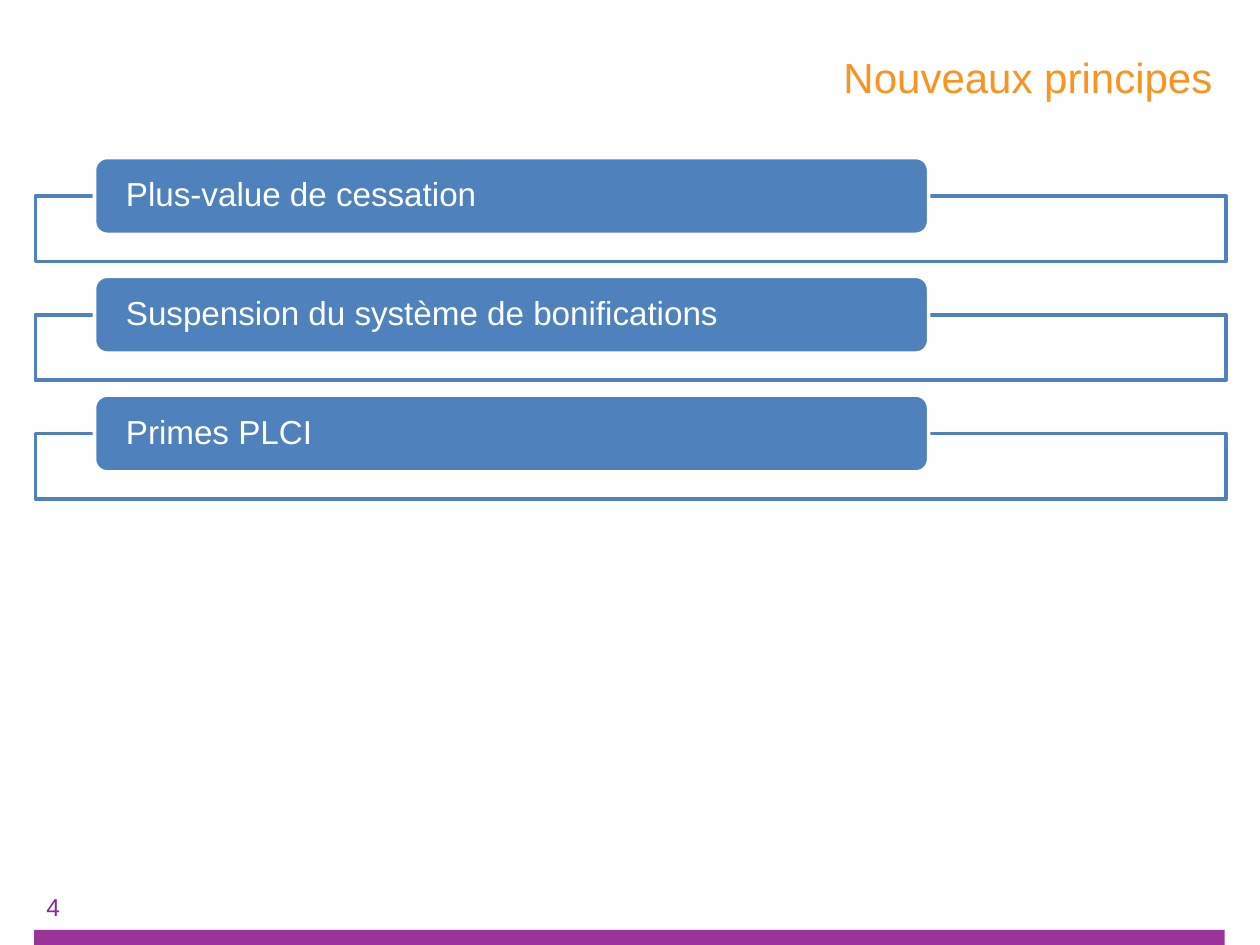
import pptx
import pptx.util
from pptx.dml.color import RGBColor
from pptx.enum.shapes import MSO_SHAPE
from pptx.enum.text import MSO_ANCHOR, PP_ALIGN

TITLE = "Nouveaux principes"
PRINCIPLES = [
    "Plus-value de cessation",
    "Suspension du système de bonifications",
    "Primes PLCI",
]
PAGE_NUMBER = "4"

COLORS = {
    "title": "F8941F",
    "principle": "4F81BD",
    "paper": "FFFFFF",
    "footer": "993399",
    "page": "862996",
}
FONT = "Arial"
WIDTH, HEIGHT = 10, 7.5
MARGIN = 0.27
FRAME_LEFT, FRAME_WIDTH, FRAME_HEIGHT = 0.28, 9.45, 0.52
LABEL_LEFT, LABEL_WIDTH, LABEL_HEIGHT = 0.75, 6.62, 0.61
FIRST_ROW, ROW_PITCH = 1.25, 0.943
FOOTER_HEIGHT = 0.12


def color(name):
    return RGBColor.from_string(COLORS[name])


def inches(*lengths):
    return [pptx.util.Inches(length) for length in lengths]


def add_box(slide, kind, place, fill, line=None):
    box = slide.shapes.add_shape(kind, *inches(*place))
    box.shadow.inherit = False
    box.fill.solid()
    box.fill.fore_color.rgb = color(fill)
    if line:
        box.line.color.rgb = color(line)
        box.line.width = pptx.util.Pt(2)
    else:
        box.line.fill.background()
    return box


def write(holder, text, *, size, ink, align=PP_ALIGN.LEFT,
          anchor=MSO_ANCHOR.MIDDLE, insets=(0.1, 0.05), spacing=1.0):
    frame = holder.text_frame
    frame.word_wrap = True
    frame.vertical_anchor = anchor
    side, edge = inches(*insets)
    frame.margin_left = frame.margin_right = side
    frame.margin_top = frame.margin_bottom = edge
    paragraph = frame.paragraphs[0]
    paragraph.alignment = align
    paragraph.line_spacing = spacing
    run = paragraph.add_run()
    run.text = text
    run.font.name = FONT
    run.font.size = pptx.util.Pt(size)
    run.font.color.rgb = color(ink)


def add_principle(slide, row, text):
    top = FIRST_ROW + row * ROW_PITCH
    frame_top = top + LABEL_HEIGHT / 2
    add_box(slide, MSO_SHAPE.RECTANGLE,
            (FRAME_LEFT, frame_top, FRAME_WIDTH, FRAME_HEIGHT),
            "paper", "principle")
    label = add_box(slide, MSO_SHAPE.ROUNDED_RECTANGLE,
                    (LABEL_LEFT, top, LABEL_WIDTH, LABEL_HEIGHT),
                    "principle", "paper")
    # The rounded corners already push the text in by 0.03
    write(label, text, size=19, ink="paper", insets=(0.22, 0), spacing=0.9)


def main():
    deck = pptx.Presentation()
    deck.slide_width, deck.slide_height = inches(WIDTH, HEIGHT)
    slide = deck.slides.add_slide(deck.slide_layouts[6])

    add_box(slide, MSO_SHAPE.RECTANGLE,
            (MARGIN, HEIGHT - FOOTER_HEIGHT, FRAME_WIDTH, FOOTER_HEIGHT), "footer")
    title = slide.shapes.add_textbox(*inches(2.29, 0, 7.43, 1.22))
    write(title, TITLE, size=24, ink="title", align=PP_ALIGN.RIGHT)
    for row, text in enumerate(PRINCIPLES):
        add_principle(slide, row, text)
    page = slide.shapes.add_textbox(*inches(MARGIN, 7.03, 2.01, 0.5))
    write(page, PAGE_NUMBER, size=14, ink="page", anchor=MSO_ANCHOR.TOP)

    deck.save("out.pptx")


if __name__ == "__main__":
    main()
